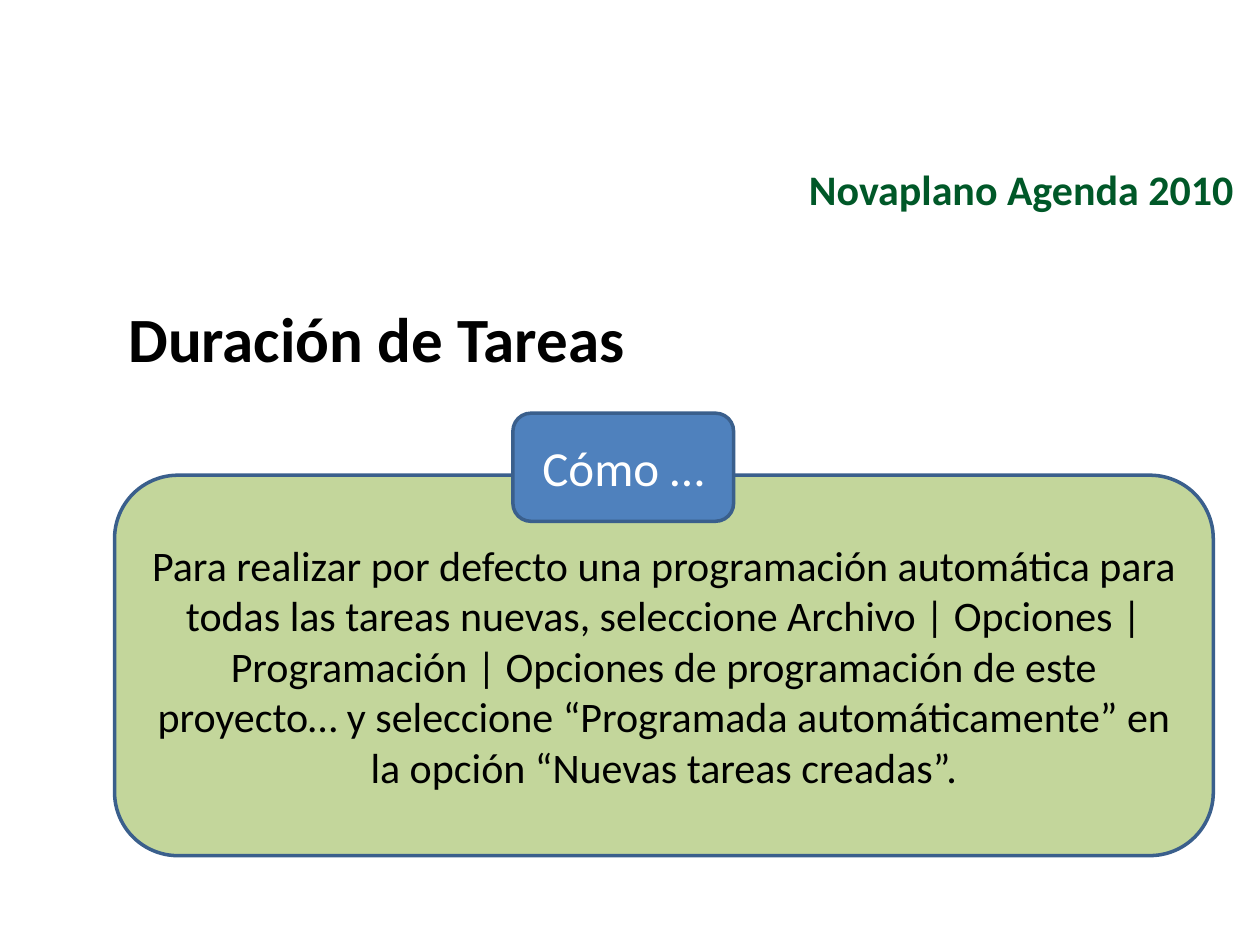
"""Build the slide on task duration with its how-to panel."""
from pptx import Presentation
from pptx.dml.color import RGBColor
from pptx.enum.shapes import MSO_SHAPE as Shape
from pptx.enum.text import MSO_ANCHOR as Anchor, PP_ALIGN as Align
from pptx.util import Cm, Pt

BLACK = RGBColor(0x00, 0x00, 0x00)
WHITE = RGBColor(0xFF, 0xFF, 0xFF)
GREEN = RGBColor(0x00, 0x58, 0x28)
LIME = RGBColor(0xC3, 0xD6, 0x9B)
BLUE = RGBColor(0x4F, 0x81, 0xBD)
NAVY = RGBColor(0x3A, 0x5F, 0x8C)


class SlideBuilder:
    def __init__(self, slide, font="Calibri", outline=NAVY):
        self.slide = slide
        self.font = font
        self.outline = outline

    def add_text(self, shape, text, size, color, align, anchor, bold=False):
        frame = shape.text_frame
        frame.word_wrap = True
        frame.vertical_anchor = anchor
        paragraph = frame.paragraphs[0]
        paragraph.alignment = align
        run = paragraph.add_run()
        run.text = text
        run.font.name = self.font
        run.font.size = Pt(size)
        run.font.bold = bold
        run.font.color.rgb = color

    def label(self, box, text, size, color, align=Align.LEFT, anchor=Anchor.TOP, indent=0):
        label = self.slide.shapes.add_textbox(*map(Cm, box))
        label.text_frame.margin_left = Cm(0.25 + indent)
        self.add_text(label, text, size, color, align, anchor, bold=True)

    def panel(self, box, text, size, color, fill):
        panel = self.slide.shapes.add_shape(Shape.ROUNDED_RECTANGLE, *map(Cm, box))
        panel.shadow.inherit = False
        panel.fill.solid()
        panel.fill.fore_color.rgb = fill
        panel.line.color.rgb = self.outline
        panel.line.width = Pt(2)
        self.add_text(panel, text, size, color, Align.CENTER, Anchor.MIDDLE)


def main():
    deck = Presentation()
    deck.slide_width, deck.slide_height = Cm(25.4), Cm(19.05)
    builder = SlideBuilder(deck.slides.add_slide(deck.slide_layouts[6]))
    builder.label((1.07, 5.92, 23.06, 12.78), "Duración de Tareas", 36, BLACK, indent=1.27)
    builder.panel(
        (2.31, 9.58, 22.15, 7.67),
        "Para realizar por defecto una programación automática para todas las tareas "
        "nuevas, seleccione Archivo | Opciones | Programación | Opciones de programación "
        "de este proyecto… y seleccione “Programada automáticamente” en la opción "
        "“Nuevas tareas creadas”.",
        24, BLACK, LIME,
    )
    builder.panel((10.34, 8.33, 4.45, 2.18), "Cómo …", 28, WHITE, BLUE)
    builder.label((13.69, 2.92, 11.43, 1.75), "Novaplano Agenda 2010", 24, GREEN,
                  Align.RIGHT, Anchor.MIDDLE)
    deck.save("out.pptx")


if __name__ == "__main__":
    main()
